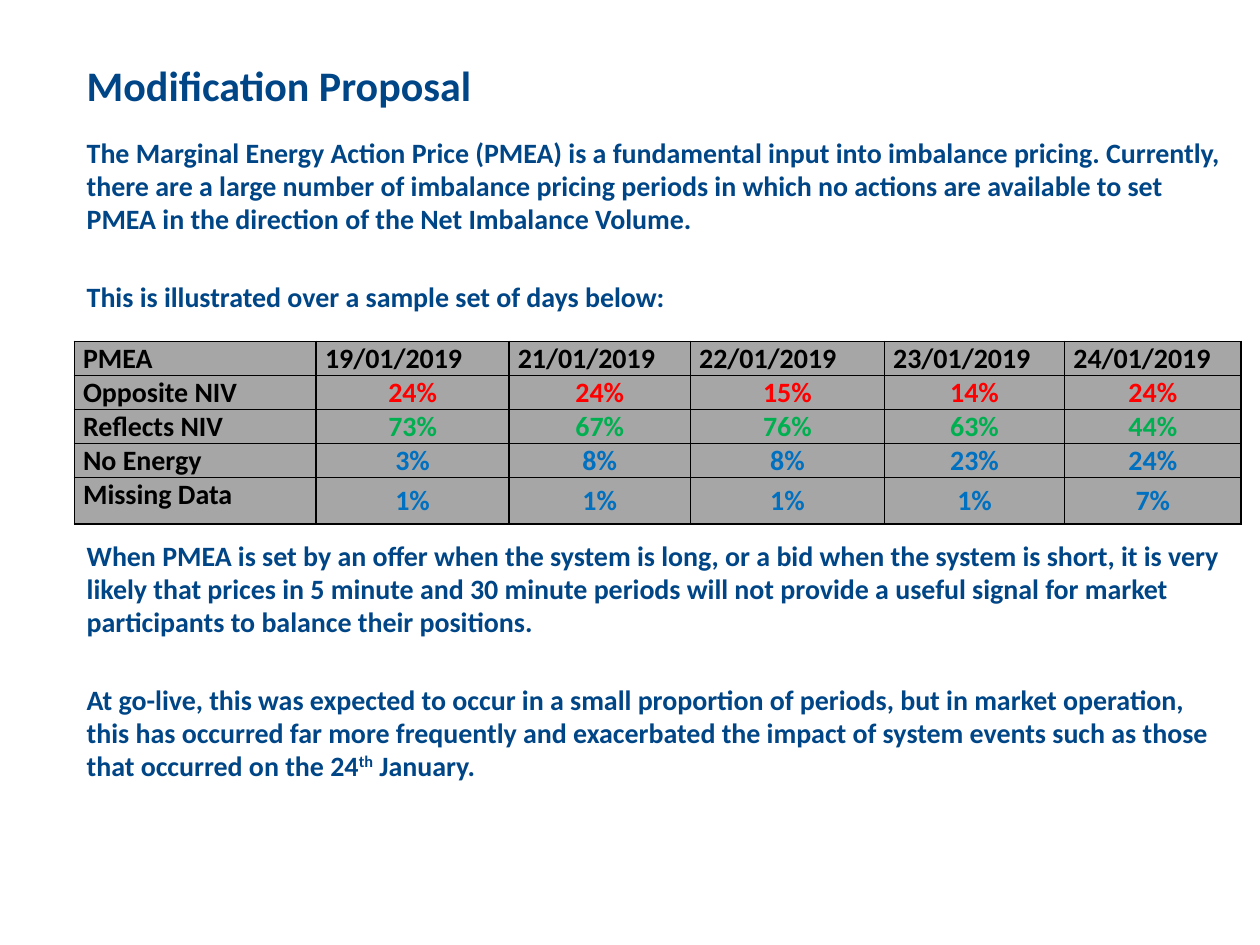
"""Build the Modification Proposal slide with its PMEA table."""
from dataclasses import dataclass

from lxml.etree import SubElement
from pptx import Presentation
from pptx.dml.color import RGBColor
from pptx.enum.text import MSO_ANCHOR, PP_ALIGN
from pptx.oxml.ns import qn
from pptx.util import Inches, Pt


@dataclass(frozen=True)
class Theme:
    font: str = "Calibri"
    navy: str = "004687"
    black: str = "000000"
    red: str = "FF0000"
    green: str = "00B050"
    blue: str = "0070C0"
    grey: str = "A6A6A6"
    title_size: int = 24
    text_size: int = 16
    border_width: int = 1


THEME = Theme()
DATES = ["19/01/2019", "21/01/2019", "22/01/2019", "23/01/2019", "24/01/2019"]
PMEA_ROWS = [
    ("PMEA", DATES, THEME.black),
    ("Opposite NIV", ["24%", "24%", "15%", "14%", "24%"], THEME.red),
    ("Reflects NIV", ["73%", "67%", "76%", "63%", "44%"], THEME.green),
    ("No Energy", ["3%", "8%", "8%", "23%", "24%"], THEME.blue),
    ("Missing Data", ["1%", "1%", "1%", "1%", "7%"], THEME.blue),
]
COLUMN_WIDTHS = [1.92, 1.53, 1.44, 1.54, 1.43, 1.4]
ROW_HEIGHTS = [0.27, 0.27, 0.27, 0.27, 0.37]
STATEMENTS = [
    (0, ["The Marginal Energy Action Price (PMEA) is a fundamental input into "
         "imbalance pricing. Currently, there are a large number of imbalance "
         "pricing periods in which no actions are available to set PMEA in the "
         "direction of the Net Imbalance Volume."]),
    (26, ["This is illustrated over a sample set of days below:"]),
    (129, ["When PMEA is set by an offer when the system is long, or a bid when "
           "the system is short, it is very likely that prices in 5 minute and 30 "
           "minute periods will not provide a useful signal for market "
           "participants to balance their positions."]),
    (26, ["At go-live, this was expected to occur in a small proportion of "
          "periods, but in market operation, this has occurred far more "
          "frequently and exacerbated the impact of system events such as those "
          "that occurred on the 24", "th", " January."]),
]


def apply_format(target, values):
    for name, value in values.items():
        setattr(target, name, value)


def add_run(paragraph, text, color, size=THEME.text_size):
    run = paragraph.add_run()
    run.text = text
    apply_format(run.font, {"name": THEME.font, "size": Pt(size), "bold": True})
    run.font.color.rgb = RGBColor.from_string(color)
    return run


def add_text_frame(slide, left, top, width, height, anchor):
    box = slide.shapes.add_textbox(*map(Inches, (left, top, width, height)))
    apply_format(box.text_frame, {"word_wrap": True, "vertical_anchor": anchor})
    return box.text_frame


def add_title(slide):
    frame = add_text_frame(slide, 0.59, 0.33, 9, 0.68, MSO_ANCHOR.MIDDLE)
    add_run(frame.paragraphs[0], "Modification Proposal", THEME.navy, THEME.title_size)


def add_statements(slide):
    frame = add_text_frame(slide, 0.59, 1.04, 9.27, 5.47, MSO_ANCHOR.TOP)
    for index, (gap, parts) in enumerate(STATEMENTS):
        paragraph = frame.add_paragraph() if index else frame.paragraphs[0]
        apply_format(paragraph, {"space_before": Pt(gap), "line_spacing": 0.98})
        for part in parts:
            run = add_run(paragraph, part, THEME.navy)
            if part == "th":
                run.font._element.set("baseline", "30000")


def add_borders(cell):
    properties = cell._tc.get_or_add_tcPr()
    for side in ("lnL", "lnR", "lnT", "lnB"):
        line = SubElement(properties, qn(f"a:{side}"), w=str(Pt(THEME.border_width)))
        fill = SubElement(line, qn("a:solidFill"))
        SubElement(fill, qn("a:srgbClr"), val=THEME.black)


def fill_cell(cell, text, color, centred):
    apply_format(cell, {
        "margin_left": Inches(0.07), "margin_right": Inches(0.07),
        "margin_top": 0, "margin_bottom": 0,
        "vertical_anchor": MSO_ANCHOR.MIDDLE if centred else MSO_ANCHOR.TOP,
    })
    add_borders(cell)
    cell.fill.solid()
    cell.fill.fore_color.rgb = RGBColor.from_string(THEME.grey)
    paragraph = cell.text_frame.paragraphs[0]
    paragraph.alignment = PP_ALIGN.CENTER if centred else PP_ALIGN.LEFT
    add_run(paragraph, text, color)


def add_pmea_table(slide):
    table = slide.shapes.add_table(
        len(ROW_HEIGHTS), len(COLUMN_WIDTHS), Inches(0.59), Inches(2.71),
        Inches(sum(COLUMN_WIDTHS)), Inches(sum(ROW_HEIGHTS))).table
    for column, width in zip(table.columns, COLUMN_WIDTHS):
        column.width = Inches(width)
    for row, height in zip(table.rows, ROW_HEIGHTS):
        row.height = Inches(height)
    for row_index, (label, values, color) in enumerate(PMEA_ROWS):
        fill_cell(table.cell(row_index, 0), label, THEME.black, False)
        for column_index, value in enumerate(values, start=1):
            fill_cell(table.cell(row_index, column_index), value, color, row_index > 0)


def main():
    presentation = Presentation()
    apply_format(presentation, {"slide_width": Inches(10), "slide_height": Inches(7.5)})
    slide = presentation.slides.add_slide(presentation.slide_layouts[6])
    add_title(slide)
    add_statements(slide)
    add_pmea_table(slide)
    presentation.save("out.pptx")


if __name__ == "__main__":
    main()
